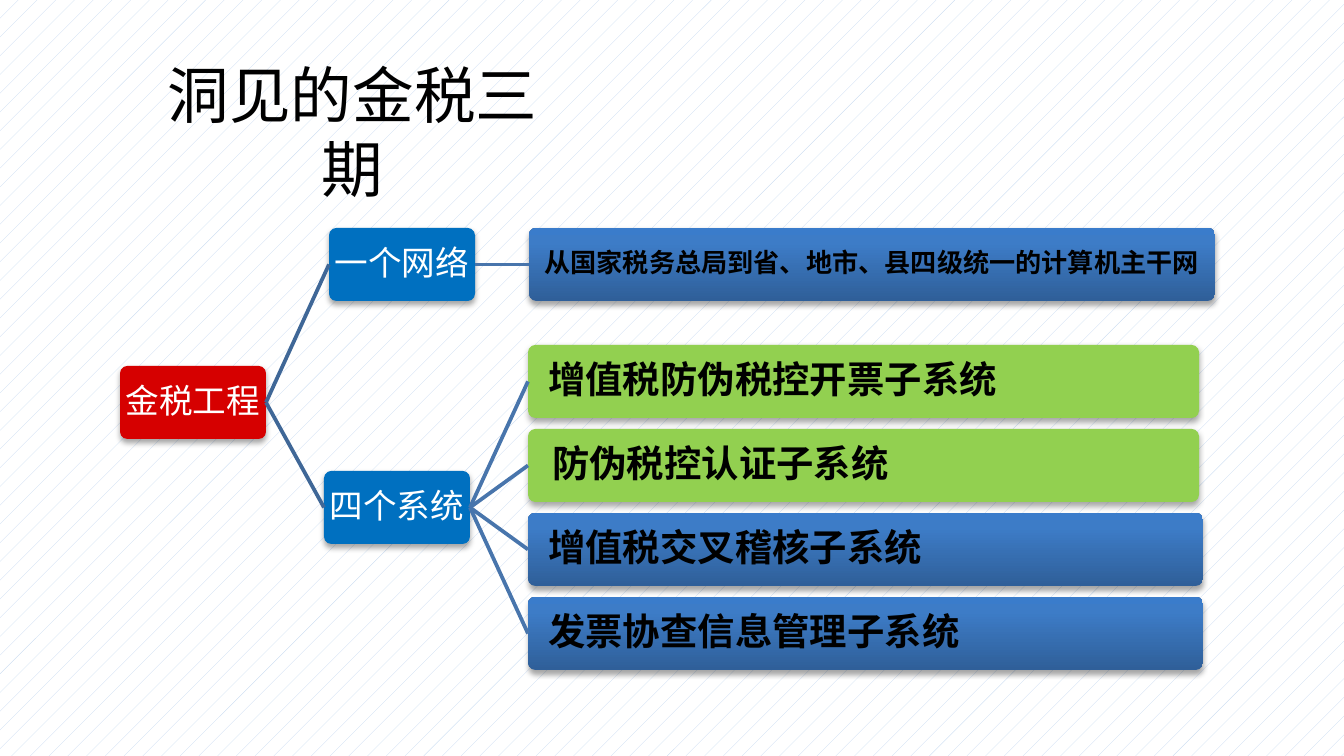
from lxml.etree import SubElement
from copy import deepcopy
from pptx import Presentation
from pptx.dml.color import RGBColor
from pptx.enum.dml import MSO_PATTERN
from pptx.enum.shapes import MSO_CONNECTOR, MSO_SHAPE
from pptx.enum.text import MSO_ANCHOR, PP_ALIGN
from pptx.oxml.ns import qn
from pptx.util import Pt

SCALE = 914400 / 134.4
BLACK = RGBColor(0x00, 0x00, 0x00)
WHITE = RGBColor(0xFF, 0xFF, 0xFF)
PALE = RGBColor(0xC6, 0xD9, 0xF1)
RED = RGBColor(0xD6, 0x00, 0x00)
BLUE = RGBColor(0x00, 0x70, 0xC0)
GREEN = RGBColor(0x92, 0xD0, 0x50)
TRUNK = RGBColor(0x3F, 0x67, 0x97)
BRANCH = RGBColor(0x48, 0x75, 0xAC)
GRADIENT = [
    (0, RGBColor(0x2F, 0x5F, 0x99)),
    (0.8, RGBColor(0x3D, 0x7C, 0xC7)),
    (1, RGBColor(0x3A, 0x7C, 0xCB)),
]
NODE_W, NODE_H = 146, 73
LEFT, RIGHT = 1, 3


def px(n):
    return round(n * SCALE)


class TreeSlide:
    """Holds the style and the current slide, and draws its elements."""

    def __init__(self, prs):
        self.s = prs.slides.add_slide(prs.slide_layouts[6])
        fill = self.s.background.fill
        fill.patterned()
        fill.pattern = MSO_PATTERN.PERCENT_5
        fill.fore_color.rgb = PALE
        fill.back_color.rgb = WHITE

    def label(self, tf, text, size, color=BLACK, name="Arial", bold=False,
              align=PP_ALIGN.CENTER, spacing=1.0):
        tf.word_wrap = True
        tf.vertical_anchor = MSO_ANCHOR.MIDDLE
        p = tf.paragraphs[0]
        p.alignment, p.line_spacing = align, spacing
        r = p.add_run()
        r.text = text
        for key, value in {"name": name, "size": Pt(size), "bold": bold}.items():
            setattr(r.font, key, value)
        r.font.color.rgb = color

    def title(self, x, y, w, h, text):
        sp = self.s.shapes.add_textbox(px(x), px(y), px(w), px(h))
        self.label(sp.text_frame, text, 33)

    def shade(self, sp):
        sp.fill.gradient()
        sp.fill.gradient_angle = 90
        stops = sp._element.spPr.find(".//" + qn("a:gsLst"))
        stops.append(deepcopy(stops[-1]))
        for stop, (position, color) in zip(sp.fill.gradient_stops, GRADIENT):
            stop.position = position
            stop.color.rgb = color

    def shadow(self, sp):
        sp.shadow.inherit = False
        effects = sp._element.spPr.find(qn("a:effectLst"))
        outer = SubElement(effects, qn("a:outerShdw"), blurRad=str(Pt(3.1)),
                           dist=str(Pt(1.8)), dir="5400000", rotWithShape="0")
        color = SubElement(outer, qn("a:srgbClr"), val=str(BLACK))
        SubElement(color, qn("a:alpha"), val="35000")

    def box(self, x, y, w, text, size, fill=None, inset=1, **style):
        sp = self.s.shapes.add_shape(MSO_SHAPE.ROUNDED_RECTANGLE,
                                     px(x), px(y), px(w), px(NODE_H))
        sp.adjustments[0] = 0.1
        if fill is None:
            self.shade(sp)
        else:
            sp.fill.solid()
            sp.fill.fore_color.rgb = fill
        sp.line.fill.background()
        self.shadow(sp)
        tf = sp.text_frame
        margins = {"left": inset, "top": 1, "right": 1, "bottom": 1}
        for side, value in margins.items():
            setattr(tf, f"margin_{side}", px(value))
        self.label(tf, text, size, spacing=0.9, **style)
        return sp

    def node(self, x, y, text, fill, name="Calibri"):
        return self.box(x, y, NODE_W, text, 18, fill, color=WHITE, name=name)

    def link(self, parent, child, color):
        c = self.s.shapes.add_connector(MSO_CONNECTOR.STRAIGHT, 0, 0, 0, 0)
        c.begin_connect(parent, RIGHT)
        c.end_connect(child, LEFT)
        c.line.color.rgb = color
        c.line.width = Pt(2)
        SubElement(c._element.spPr, qn("a:effectLst"))


def main():
    prs = Presentation()
    prs.slide_width, prs.slide_height = px(1344), px(756)
    tree = TreeSlide(prs)
    tree.title(148, 91, 409, 79, "洞见的金税三期")

    root = tree.node(120, 366, "金税工程", RED, "Arial")
    network = tree.node(329, 228, "一个网络", BLUE)
    systems = tree.node(324, 471, "四个系统", BLUE)
    for group in (network, systems):
        tree.link(root, group, TRUNK)

    backbone = tree.box(529, 228, 686, "从国家税务总局到省、地市、县四级统一的计算机主干网",
                        14, bold=True)
    tree.link(network, backbone, BRANCH)

    subsystems = [
        ("增值税防伪税控开票子系统", 671, GREEN, 18),
        ("防伪税控认证子系统", 671, GREEN, 22),
        ("增值税交叉稽核子系统", 675, None, 18),
        ("发票协查信息管理子系统", 675, None, 18),
    ]
    for i, (text, w, fill, inset) in enumerate(subsystems):
        sp = tree.box(528, 345 + 84 * i, w, text, 20, fill, inset,
                      bold=True, align=PP_ALIGN.LEFT)
        tree.link(systems, sp, BRANCH)

    prs.save("out.pptx")


if __name__ == "__main__":
    main()
